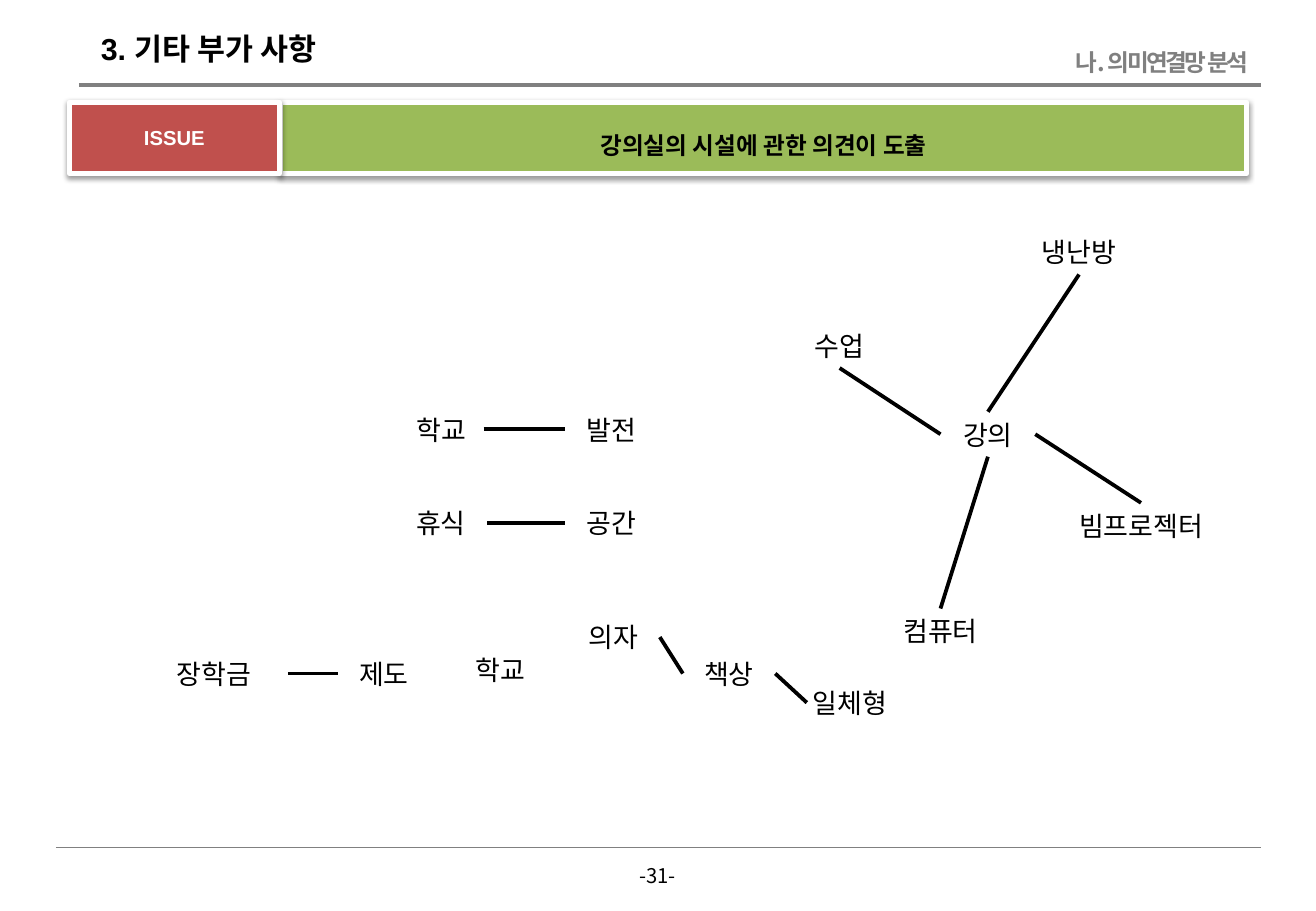
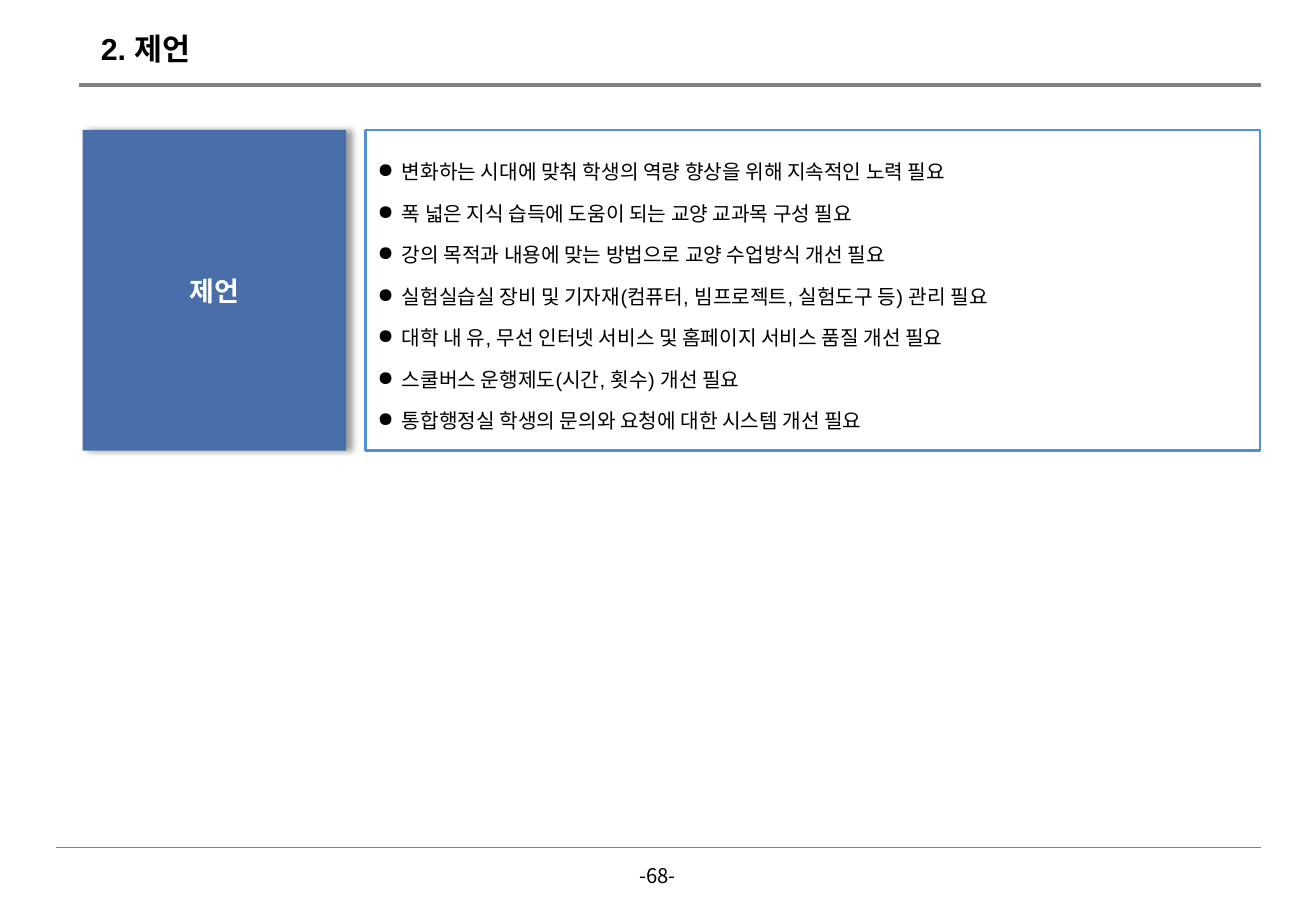
from dataclasses import dataclass
from enum import IntEnum
from typing import Optional

from lxml import etree
from pptx import Presentation
from pptx import util as u
from pptx.dml.color import RGBColor
from pptx.enum import shapes, text
from pptx.oxml import ns


@dataclass(frozen=True)
class Theme:
    black: str = "000000"
    white: str = "FFFFFF"
    gray: str = "808080"
    red: str = "C0504D"
    green: str = "9BBB59"
    blue: str = "486FAA"
    frame_blue: str = "558ED5"
    heading_font: str = "Arial"
    word_font: str = "Calibri"
    korean_font: str = "Noto Sans CJK KR"
    title_size: float = 18
    word_size: float = 16
    headline_size: float = 14
    body_size: float = 12


THEME = Theme()


@dataclass(frozen=True)
class Box:
    left: float
    top: float
    width: float
    height: float

    def lengths(self) -> tuple:
        return tuple(u.Inches(v) for v in (self.left, self.top, self.width, self.height))


@dataclass(frozen=True)
class Style:
    size: float
    color: str = THEME.black
    font: str = THEME.heading_font
    bold: bool = False
    align: text.PP_ALIGN = text.PP_ALIGN.CENTER
    line_spacing: float = 1.0
    space_before: float = 0


@dataclass(frozen=True)
class Shadow:
    alpha: int
    blur: float
    distance: float
    angle: int


class Side(IntEnum):
    TOP = 0
    LEFT = 1
    BOTTOM = 2
    RIGHT = 3


@dataclass(frozen=True)
class Word:
    label: str
    left: float
    top: float
    width: float


@dataclass(frozen=True)
class Link:
    start: Word
    start_side: Side
    end: Word
    end_side: Side
    inset: float = 0


WORD_HEIGHT = 0.37
CARD_SHADOW = Shadow(38, 3.1, 1.6, 90)
PANEL_SHADOW = Shadow(40, 4, 3, 0)
TITLE = Style(THEME.title_size, bold=True, align=text.PP_ALIGN.LEFT)
PAGE_NUMBER = Style(THEME.body_size, font=THEME.korean_font)
SECTION = Style(THEME.headline_size, THEME.gray, THEME.korean_font, True, text.PP_ALIGN.RIGHT)
HEADLINE = Style(THEME.headline_size, bold=True, line_spacing=1.5)
TAG = Style(THEME.body_size, THEME.white, bold=True)
PANEL = Style(THEME.word_size, THEME.white, bold=True)
WORD = Style(THEME.word_size, font=THEME.word_font)
BULLETS = Style(THEME.body_size, align=text.PP_ALIGN.LEFT, line_spacing=1.5, space_before=3)

# Words of the semantic network
COOLING = Word("냉난방", 8.14, 1.89, 1.48)
LECTURE = Word("강의", 7.74, 3.39, 0.78)
PROJECTOR = Word("빔프로젝터", 8.65, 4.14, 1.48)
CLASS = Word("수업", 6.17, 2.66, 1.48)
COMPUTER = Word("컴퓨터", 7, 5.01, 1.48)
CHAIR = Word("의자", 4.67, 5.06, 0.76)
DESK = Word("책상", 5.62, 5.36, 0.76)
ONE_PIECE = Word("일체형", 6.49, 5.6, 1.01)
REST = Word("휴식", 3.25, 4.12, 0.76)
SPACE = Word("공간", 4.65, 4.12, 0.76)
SCHOOL = Word("학교", 3.29, 3.35, 0.69)
GROWTH = Word("발전", 4.65, 3.35, 0.76)
SCHOLARSHIP = Word("장학금", 1.15, 5.36, 1.22)
SYSTEM = Word("제도", 2.78, 5.36, 0.76)
LONE_SCHOOL = Word("학교", 3.51, 5.33, 1.22)

WORDS = [COOLING, LECTURE, PROJECTOR, CLASS, COMPUTER, CHAIR, DESK, ONE_PIECE,
         REST, SPACE, SCHOOL, GROWTH, SCHOLARSHIP, SYSTEM, LONE_SCHOOL]
LINKS = [
    Link(COOLING, Side.BOTTOM, LECTURE, Side.TOP),
    Link(CLASS, Side.BOTTOM, LECTURE, Side.LEFT),
    Link(LECTURE, Side.RIGHT, PROJECTOR, Side.TOP),
    Link(COMPUTER, Side.TOP, LECTURE, Side.BOTTOM),
    Link(CHAIR, Side.RIGHT, DESK, Side.LEFT),
    Link(DESK, Side.RIGHT, ONE_PIECE, Side.LEFT, inset=0.15),
    Link(REST, Side.RIGHT, SPACE, Side.LEFT),
    Link(SCHOOL, Side.RIGHT, GROWTH, Side.LEFT),
    Link(SCHOLARSHIP, Side.RIGHT, SYSTEM, Side.LEFT),
]

SUGGESTIONS = [
    "변화하는 시대에 맞춰 학생의 역량 향상을 위해 지속적인 노력 필요",
    "폭 넓은 지식 습득에 도움이 되는 교양 교과목 구성 필요",
    "강의 목적과 내용에 맞는 방법으로 교양 수업방식 개선 필요",
    "실험실습실 장비 및 기자재(컴퓨터, 빔프로젝트, 실험도구 등) 관리 필요",
    "대학 내 유, 무선 인터넷 서비스 및 홈페이지 서비스 품질 개선 필요",
    "스쿨버스 운행제도(시간, 횟수) 개선 필요",
    "통합행정실 학생의 문의와 요청에 대한 시스템 개선 필요",
]


# Text and shape helpers
def add_child(parent, tag: str, **attributes):
    return etree.SubElement(parent, ns.qn(tag), {k: str(v) for k, v in attributes.items()})


def write(shape, lines: list[str], style: Style, wrap: bool = True, bullet: str = "") -> None:
    frame = shape.text_frame
    frame.text = "\n".join(lines)
    frame.word_wrap = wrap
    frame.auto_size = text.MSO_AUTO_SIZE.NONE
    frame.vertical_anchor = text.MSO_ANCHOR.MIDDLE
    for index, paragraph in enumerate(frame.paragraphs):
        paragraph.alignment = style.align
        paragraph.line_spacing = style.line_spacing
        paragraph.space_before = u.Pt(style.space_before if index else 0)
        if bullet:
            properties = paragraph._p.get_or_add_pPr()
            properties.set("marL", str(u.Inches(0.2)))
            properties.set("indent", str(-u.Inches(0.2)))
            add_child(properties, "a:buChar", char=bullet)
        for run in paragraph.runs:
            run.font.size = u.Pt(style.size)
            run.font.bold = style.bold
            run.font.name = style.font
            run.font.color.rgb = RGBColor.from_string(style.color)
            add_child(run.font._element, "a:ea", typeface=THEME.korean_font)


def add_label(slide, box: Box, label: str, style: Style, wrap: bool = True):
    shape = slide.shapes.add_textbox(*box.lengths())
    write(shape, [label], style, wrap)
    return shape


def add_block(slide, box: Box, fill: Optional[str] = None, line: Optional[str] = None,
              line_width: float = 0, shadow: Optional[Shadow] = None):
    shape = slide.shapes.add_shape(shapes.MSO_SHAPE.RECTANGLE, *box.lengths())
    if fill:
        shape.fill.solid()
        shape.fill.fore_color.rgb = RGBColor.from_string(fill)
    else:
        shape.fill.background()
    if line:
        shape.line.color.rgb = RGBColor.from_string(line)
        shape.line.width = u.Pt(line_width)
    else:
        shape.line.fill.background()
    shape.shadow.inherit = False
    if shadow:
        effects = shape._element.spPr.find(ns.qn("a:effectLst"))
        outer = add_child(effects, "a:outerShdw", blurRad=u.Pt(shadow.blur),
                          dist=u.Pt(shadow.distance), dir=shadow.angle * 60000,
                          algn="ctr", rotWithShape=0)
        color = add_child(outer, "a:srgbClr", val=THEME.black)
        add_child(color, "a:alpha", val=shadow.alpha * 1000)
    return shape


def add_line(slide, start: tuple[float, float], end: tuple[float, float],
             color: str, width: float):
    points = [u.Inches(v) for v in (*start, *end)]
    line = slide.shapes.add_connector(shapes.MSO_CONNECTOR.STRAIGHT, *points)
    line.line.color.rgb = RGBColor.from_string(color)
    line.line.width = u.Pt(width)
    add_child(line._element.spPr, "a:effectLst")
    return line


def add_page(deck, title: str, title_width: float, number: int):
    slide = deck.slides.add_slide(deck.slide_layouts.get_by_name("Title Only"))
    add_line(slide, (0.65, 0.7), (10.38, 0.7), THEME.gray, 2)
    add_line(slide, (0.46, 6.98), (10.38, 6.98), THEME.gray, 0.5)
    heading = slide.shapes.title
    heading.left, heading.top, heading.width, heading.height = Box(
        0.73, 0.2, title_width, 0.4).lengths()
    write(heading, [title], TITLE, wrap=False)
    add_label(slide, Box(5.15, 7.06, 0.52, 0.3), f"-{number}-", PAGE_NUMBER, wrap=False)
    return slide


# Slides
def build_network(deck) -> None:
    slide = add_page(deck, "3. 기타 부가 사항", 2.2, 31)
    section = add_label(slide, Box(5.53, 0.34, 4.84, 0.34), "나. 의미연결망 분석", SECTION)
    section.text_frame.paragraphs[0].runs[0].font._element.set("spc", "-150")

    # Issue banner
    banner = add_block(slide, Box(2.31, 0.84, 7.95, 0.59), THEME.green, THEME.white, 3, CARD_SHADOW)
    write(banner, ["강의실의 시설에 관한 의견이 도출"], HEADLINE)
    tag = add_block(slide, Box(0.57, 0.84, 1.73, 0.59), THEME.red, THEME.white, 3, CARD_SHADOW)
    write(tag, ["ISSUE"], TAG)

    # Linked words
    nodes = {word: add_label(slide, Box(word.left, word.top, word.width, WORD_HEIGHT),
                             word.label, WORD) for word in WORDS}
    for link in LINKS:
        line = add_line(slide, (0, 0), (0, 0), THEME.black, 2.25)
        line.begin_connect(nodes[link.start], link.start_side)
        if link.inset:
            line.end_x = u.Inches(link.end.left + link.inset)
            line.end_y = u.Inches(link.end.top + WORD_HEIGHT / 2)
        else:
            line.end_connect(nodes[link.end], link.end_side)


def build_suggestions(deck) -> None:
    slide = add_page(deck, "2. 제언", 1.01, 68)
    panel = add_block(slide, Box(0.68, 1.07, 2.17, 2.64), THEME.blue, shadow=PANEL_SHADOW)
    write(panel, ["제언"], PANEL)
    suggestions = add_block(slide, Box(3.01, 1.07, 7.36, 2.64), line=THEME.frame_blue, line_width=1.5)
    write(suggestions, SUGGESTIONS, BULLETS, bullet="●")


def main() -> None:
    deck = Presentation()
    deck.slide_width, deck.slide_height = u.Inches(10.83), u.Inches(7.5)
    build_network(deck)
    build_suggestions(deck)
    deck.save("out.pptx")


if __name__ == "__main__":
    main()
